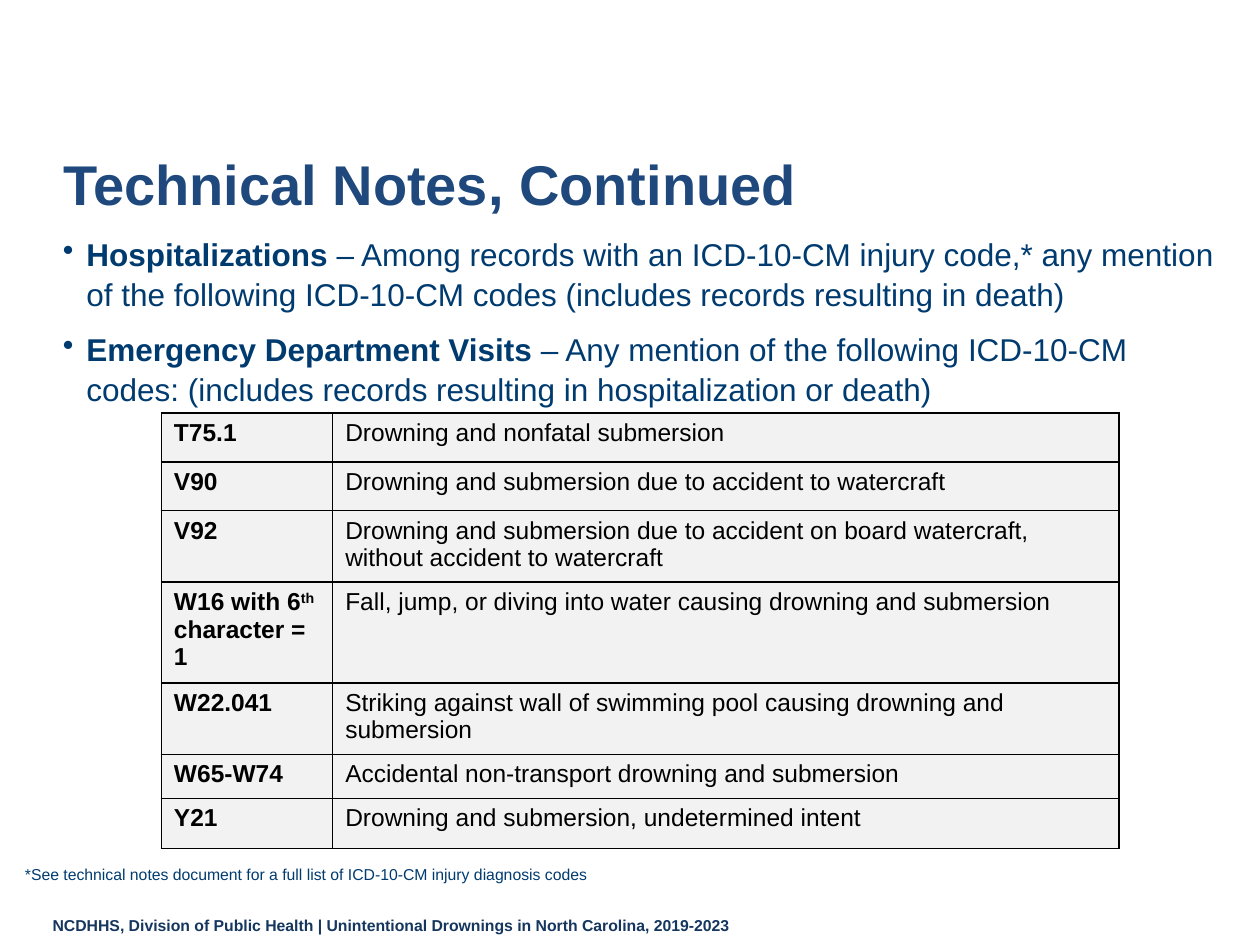
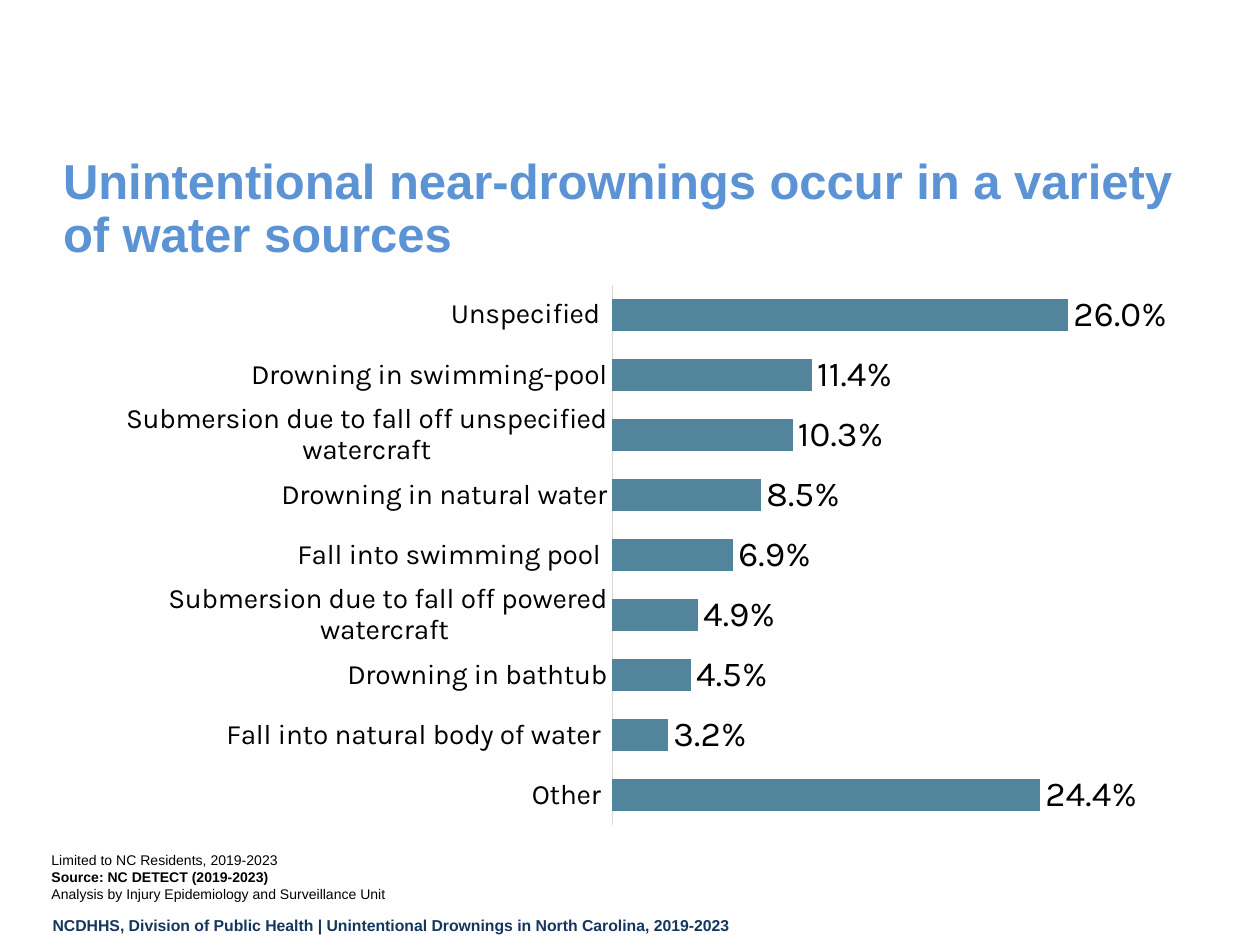
from pptx import Presentation
from pptx.chart.data import CategoryChartData
from pptx.dml.color import RGBColor
from pptx.enum.chart import XL_CHART_TYPE as ChartType
from pptx.enum.chart import XL_LABEL_POSITION as LabelPosition
from pptx.enum.chart import XL_TICK_LABEL_POSITION as TickLabelPosition
from pptx.enum.chart import XL_TICK_MARK as TickMark
from pptx.enum.text import MSO_ANCHOR as Anchor
from pptx.enum.text import MSO_AUTO_SIZE as AutoSize
from pptx.enum.text import PP_ALIGN as Align
from pptx.oxml import parse_xml
from pptx.oxml.ns import nsdecls
from pptx.util import Pt

COLORS = {
    "title": "1F497D", "chart_title": "5C93D5", "body": "003B70",
    "footer": "15365E", "text": "000000", "cell": "F2F2F2",
    "bar": "52849C", "axis": "D9D9D9",
}
FOOTER = "NCDHHS, Division of Public Health | Unintentional Drownings in North Carolina, 2019-2023"

# Boxes are left, top, width, height in points
FOOTER_BOX = (23, 520, 629, 20)
NOTES_TITLE_BOX = (28.8, 86.4, 674.6, 43.2)
CHART_TITLE_BOX = (28.8, 86.4, 674.6, 62.6)
DEFINITIONS_BOX = (28.8, 129.6, 674.6, 100)
TABLE_BOX = (92.2, 236, 547.2, 248.4)
FOOTNOTE_BOX = (7.2, 482.4, 635.8, 26)
CHART_BOX = (37.4, 152.6, 653.8, 326.2)
SOURCE_BOX = (22.3, 483.1, 653.8, 36)

DEFINITIONS = [
    ("Hospitalizations", " – Among records with an ICD-10-CM injury code,* any mention of the "
     "following ICD-10-CM codes (includes records resulting in death)"),
    ("Emergency Department Visits ", "– Any mention of the following ICD-10-CM codes: "
     "(includes records resulting in hospitalization or death)"),
]
# Code (pieces, the second one raised), meaning, row height
CODE_ROWS = [
    (["T75.1"], "Drowning and nonfatal submersion", 28.1),
    (["V90"], "Drowning and submersion due to accident to watercraft", 27.6),
    (["V92"], "Drowning and submersion due to accident on board watercraft, "
     "without accident to watercraft", 40.8),
    (["W16 with 6", "th", " character = 1"],
     "Fall, jump, or diving into water causing drowning and submersion", 38.2),
    (["W22.041"], "Striking against wall of swimming pool causing drowning and submersion", 25.2),
    (["W65-W74"], "Accidental non-transport drowning and submersion", 25.2),
    (["Y21"], "Drowning and submersion, undetermined intent", 28.6),
]
CODE_COLUMN_WIDTH = 97.9
WATER_SOURCES = {
    "Unspecified ": 26,
    "Drowning in swimming-pool": 11.4,
    "Submersion due to fall off unspecified watercraft": 10.3,
    "Drowning in natural water": 8.5,
    "Fall into swimming pool ": 6.9,
    "Submersion due to fall off powered watercraft ": 4.9,
    "Drowning in bathtub": 4.5,
    "Fall into natural body of water ": 3.2,
    "Other ": 24.4,
}
PLOT_AREA = {"x": 0.478, "y": 0.031, "w": 0.46, "h": 0.947}


def points(box):
    return [Pt(value) for value in box]


def set_values(target, values):
    for name, value in values.items():
        setattr(target, name, value)


def style_font(font, size, color, bold=False, name="Arial"):
    set_values(font, {"size": Pt(size), "bold": bold, "name": name})
    font.color.rgb = RGBColor.from_string(COLORS[color])


def add_run(paragraph, text, size, color, bold=False):
    run = paragraph.add_run()
    run.text = text
    style_font(run.font, size, color, bold)
    return run


def add_text_box(slide, box, anchor=Anchor.TOP):
    frame = slide.shapes.add_textbox(*points(box)).text_frame
    set_values(frame, {"word_wrap": True, "vertical_anchor": anchor})
    return frame


def add_lines(slide, box, lines, size, color, anchor=Anchor.TOP):
    """Plain lines, each given as text and bold flag."""
    frame = add_text_box(slide, box, anchor)
    for index, (text, bold) in enumerate(lines):
        paragraph = frame.add_paragraph() if index else frame.paragraphs[0]
        add_run(paragraph, text, size, color, bold)


def add_titled_slide(presentation, text, box, size, color):
    slide = presentation.slides.add_slide(presentation.slide_layouts[5])
    title = slide.shapes.title
    set_values(title, dict(zip(("left", "top", "width", "height"), points(box))))
    frame = title.text_frame
    set_values(frame, {"word_wrap": True, "auto_size": AutoSize.NONE,
                       "vertical_anchor": Anchor.TOP})
    paragraph = frame.paragraphs[0]
    set_values(paragraph, {"alignment": Align.LEFT, "line_spacing": 0.9})
    add_run(paragraph, text, size, color, True)
    add_lines(slide, FOOTER_BOX, [(FOOTER, True)], 9, "footer")
    return slide


def add_definitions(slide, box):
    frame = add_text_box(slide, box)
    for index, (term, meaning) in enumerate(DEFINITIONS):
        paragraph = frame.add_paragraph() if index else frame.paragraphs[0]
        properties = paragraph._p.get_or_add_pPr()
        properties.set("marL", str(Pt(13.5)))
        properties.set("indent", str(-Pt(13.5)))
        properties.append(parse_xml(f'<a:buChar {nsdecls("a")} char="•"/>'))
        set_values(paragraph, {"line_spacing": 1.05, "space_before": Pt(9 * index)})
        add_run(paragraph, term, 18, "body", True)
        add_run(paragraph, meaning, 18, "body")


def format_cell(cell):
    cell.fill.solid()
    cell.fill.fore_color.rgb = RGBColor.from_string(COLORS["cell"])
    properties = cell._tc.get_or_add_tcPr()
    for index, side in enumerate("LRTB"):
        properties.insert(index, parse_xml(
            f'<a:ln{side} {nsdecls("a")} w="{Pt(1)}"><a:solidFill>'
            f'<a:srgbClr val="{COLORS["text"]}"/></a:solidFill></a:ln{side}>'))


def add_code_table(slide, box):
    table = slide.shapes.add_table(len(CODE_ROWS), 2, *points(box)).table
    set_values(table, {"first_row": False, "horz_banding": False})
    table.columns[0].width = Pt(CODE_COLUMN_WIDTH)
    table.columns[1].width = Pt(box[2] - CODE_COLUMN_WIDTH)
    for index, (code, meaning, height) in enumerate(CODE_ROWS):
        table.rows[index].height = Pt(height)
        for column, pieces in enumerate((code, [meaning])):
            cell = table.cell(index, column)
            format_cell(cell)
            paragraph = cell.text_frame.paragraphs[0]
            for position, piece in enumerate(pieces):
                run = add_run(paragraph, piece, 14, "text", column == 0)
                if position == 1:
                    run._r.get_or_add_rPr().set("baseline", "30000")


def add_water_source_chart(slide, box):
    data = CategoryChartData()
    data.categories = list(WATER_SOURCES)
    data.add_series("Series 1", list(WATER_SOURCES.values()))
    chart = slide.shapes.add_chart(ChartType.BAR_CLUSTERED, *points(box), data).chart
    set_values(chart, {"has_legend": False, "has_title": False})
    style_font(chart.font, 10, "text")

    # Axes
    category_axis = chart.category_axis
    set_values(category_axis, {
        "reverse_order": True, "major_tick_mark": TickMark.NONE,
        "minor_tick_mark": TickMark.NONE, "has_major_gridlines": False,
        "tick_label_position": TickLabelPosition.NEXT_TO_AXIS})
    style_font(category_axis.tick_labels.font, 16, "text", name="Karla")
    axis_line = category_axis.format.line
    axis_line.width = Pt(0.75)
    axis_line.color.rgb = RGBColor.from_string(COLORS["axis"])
    set_values(chart.value_axis, {
        "visible": False, "has_major_gridlines": False,
        "minimum_scale": 0, "maximum_scale": 30})

    # Bars and their labels
    plot = chart.plots[0]
    set_values(plot, {"gap_width": 87, "vary_by_categories": False})
    fill = plot.series[0].format.fill
    fill.solid()
    fill.fore_color.rgb = RGBColor.from_string(COLORS["bar"])
    labels = plot.series[0].data_labels
    set_values(labels, {
        "show_value": True, "position": LabelPosition.OUTSIDE_END,
        "number_format": '0.0"%"', "number_format_is_linked": False})
    style_font(labels.font, 20, "text", name="Karla")

    # Fixed inner plot area
    plot_area = chart._chartSpace.chart.plotArea
    for layout in plot_area.findall("{*}layout"):
        plot_area.remove(layout)
    modes = "".join(f'<c:{side}Mode val="edge"/>' for side in "xy")
    sizes = "".join(f'<c:{side} val="{value}"/>' for side, value in PLOT_AREA.items())
    plot_area.insert(0, parse_xml(
        f'<c:layout {nsdecls("c")}><c:manualLayout><c:layoutTarget val="inner"/>'
        f'{modes}{sizes}</c:manualLayout></c:layout>'))


def build_notes_slide(presentation):
    slide = add_titled_slide(presentation, "Technical Notes, Continued",
                             NOTES_TITLE_BOX, 32, "title")
    add_definitions(slide, DEFINITIONS_BOX)
    add_lines(slide, FOOTNOTE_BOX, [
        ("*See technical notes document for a full list of ICD-10-CM injury diagnosis codes", False),
    ], 9, "body", Anchor.BOTTOM)
    add_code_table(slide, TABLE_BOX)


def build_chart_slide(presentation):
    slide = add_titled_slide(
        presentation, "Unintentional near-drownings occur in a variety of water sources",
        CHART_TITLE_BOX, 28, "chart_title")
    add_water_source_chart(slide, CHART_BOX)
    add_lines(slide, SOURCE_BOX, [
        ("Limited to NC Residents, 2019-2023", False),
        ("Source: NC DETECT (2019-2023)", True),
        ("Analysis by Injury Epidemiology and Surveillance Unit", False),
    ], 8, "text")


def main():
    presentation = Presentation()
    set_values(presentation, {"slide_width": Pt(720), "slide_height": Pt(540)})
    build_notes_slide(presentation)
    build_chart_slide(presentation)
    presentation.save("out.pptx")


if __name__ == "__main__":
    main()
